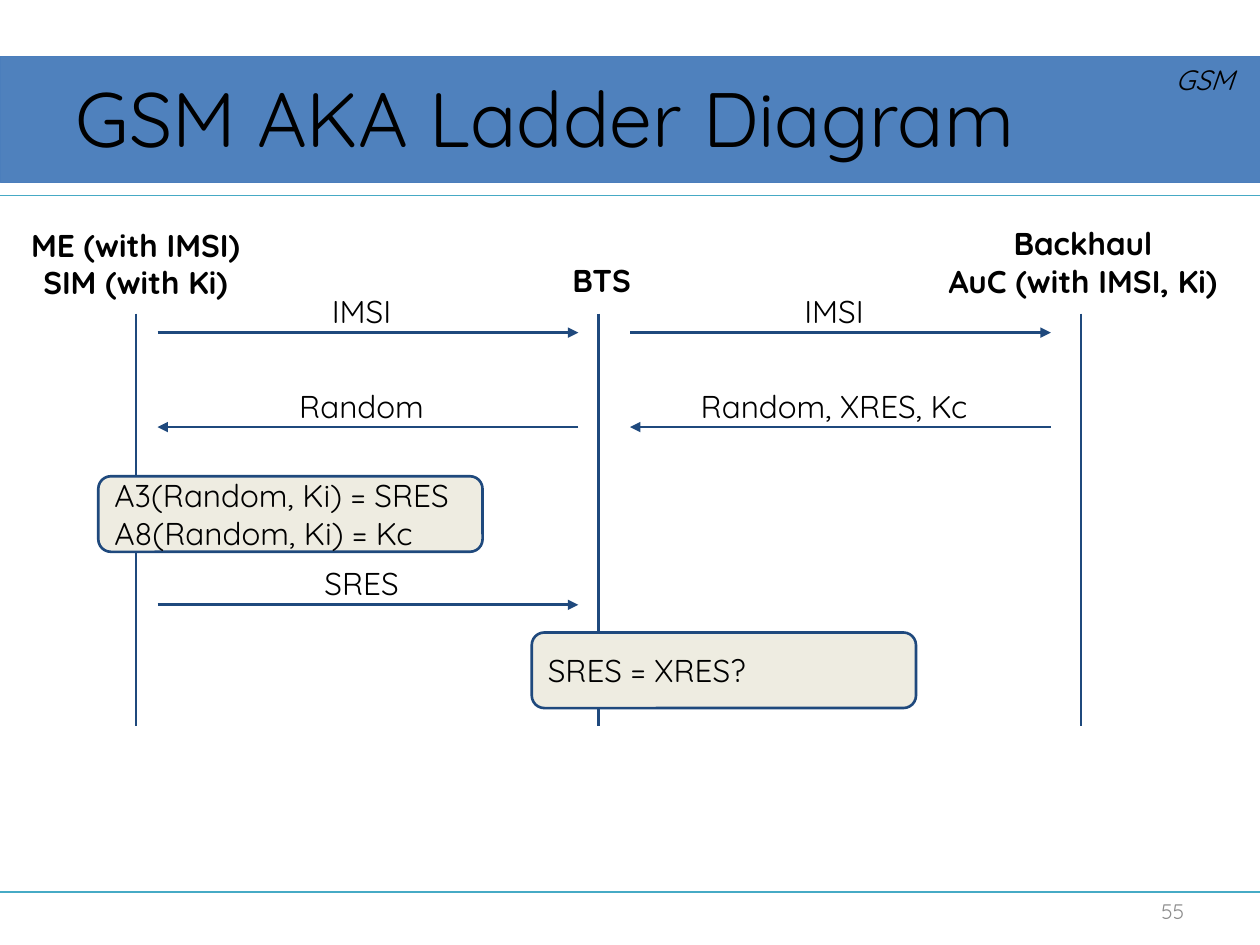
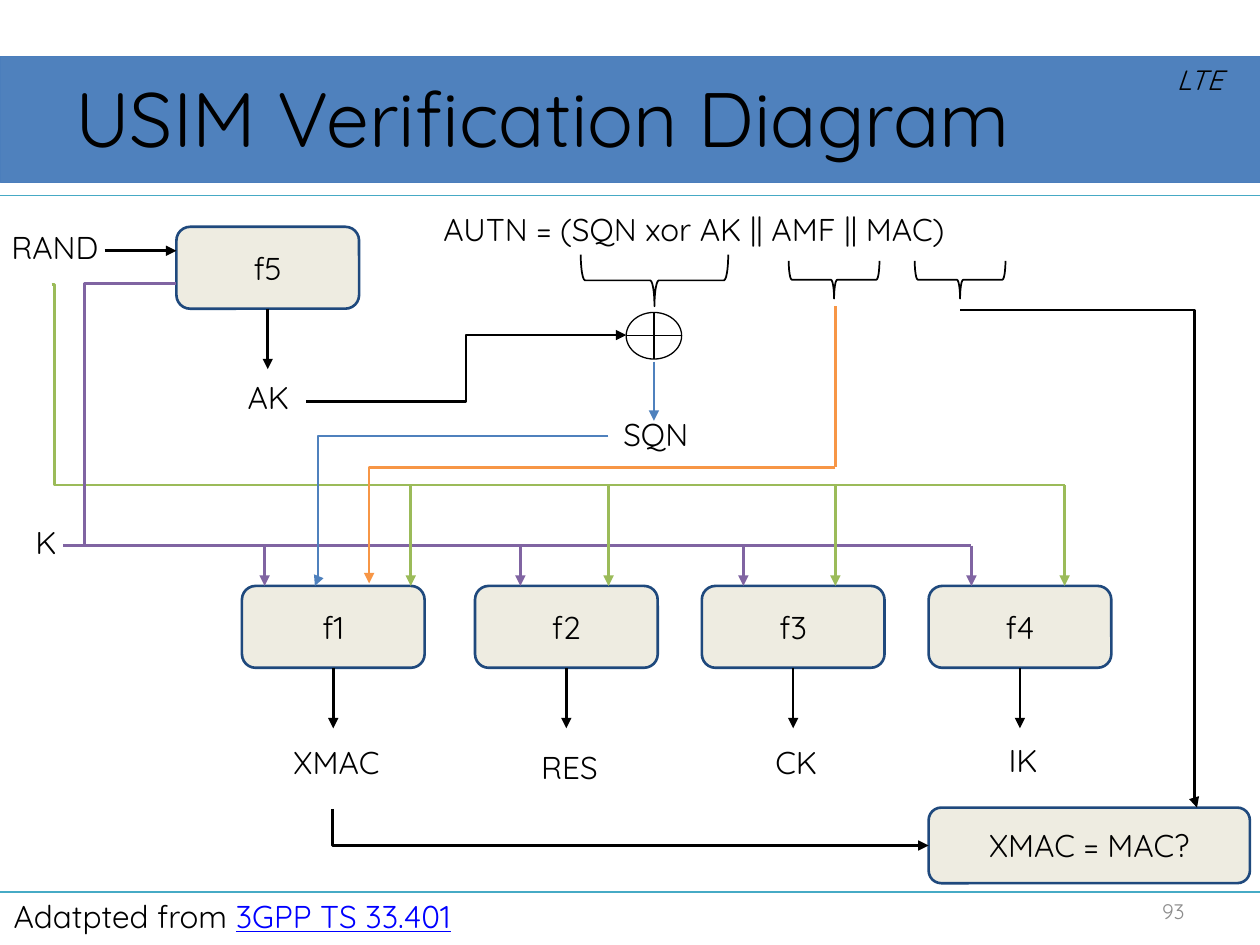
from lxml import etree
from pptx import Presentation
from pptx.dml.color import RGBColor
from pptx.enum import shapes, text
from pptx.oxml import ns
from pptx.util import Inches, Pt

BLACK = RGBColor(0x00, 0x00, 0x00)
GRAY = RGBColor(0x8C, 0x8C, 0x8C)
NAVY = RGBColor(0x1F, 0x49, 0x7D)
BLUE = RGBColor(0x4F, 0x81, 0xBD)
BAND_EDGE = RGBColor(0x4B, 0x7E, 0xBC)
TEAL = RGBColor(0x46, 0xAA, 0xC5)
CREAM = RGBColor(0xEE, 0xEC, 0xE1)
GREEN = RGBColor(0x9B, 0xBB, 0x59)
PURPLE = RGBColor(0x80, 0x64, 0xA2)
ORANGE = RGBColor(0xF7, 0x96, 0x46)
LINK = RGBColor(0x00, 0x00, 0xFF)

FONT = "Quicksand"
SHAPE = shapes.MSO_SHAPE
LEFT, CENTER, RIGHT = text.PP_ALIGN.LEFT, text.PP_ALIGN.CENTER, text.PP_ALIGN.RIGHT
TOP, MIDDLE = text.MSO_ANCHOR.TOP, text.MSO_ANCHOR.MIDDLE

LIFELINES = [1.08, 4.75, 8.58]
LIFELINE_TOP, LIFELINE_BOTTOM = 2.49, 5.76
PARTIES = [
    (["ME (with IMSI)", "SIM (with Ki)"], (-0.08, 1.69, 2.31, 0.83)),
    (["BTS"], (3.81, 1.97, 1.93, 0.4)),
    (["Backhaul", "AuC (with IMSI, Ki)"], (7.37, 1.68, 2.45, 0.93)),
]
ME_TO_BTS, BTS_TO_AUC = (1.25, 4.59), (5, 8.34)
MESSAGES = [
    ("IMSI", ME_TO_BTS, 2.64),
    ("IMSI", BTS_TO_AUC, 2.64),
    ("Random, XRES, Kc", BTS_TO_AUC[::-1], 3.39),
    ("Random", ME_TO_BTS[::-1], 3.39),
    ("SRES", ME_TO_BTS, 4.8),
]
COMPUTATIONS = [
    (["A3(Random, Ki) = SRES", "A8(Random, Ki) = Kc"], (0.78, 3.78)),
    (["SRES = XRES?"], (4.22, 5.02)),
]

FUNCTION_SIZE = (1.45, 0.65)
FUNCTION_TOP = 4.65
FUNCTIONS = [
    ("f1", 1.92, "XMAC", 5.8),
    ("f2", 3.77, "RES", 5.84),
    ("f3", 5.57, "CK", 5.8),
    ("f4", 7.37, "IK", 5.78),
]
INPUTS = [
    ("SQN", (4.24, 3.19)),
    ("K", (-0.6, 4.05)),
    ("RAND", (-0.53, 1.71)),
]
RAND_BUS, RAND_DROPS = 3.85, [3.26, 4.83, 6.63, 8.45]
K_BUS, K_DROPS = 4.33, [2.1, 4.13, 5.9, 7.71]
STRAIGHTS = [
    ((8.45, RAND_BUS), (2.52, RAND_BUS), GREEN, False),
    ((7.71, K_BUS), (0.5, K_BUS), PURPLE, False),
    ((0.83, 1.99), (1.4, 1.99), BLACK, True),
    ((5.19, 2.87), (5.19, 3.34), BLUE, True),
    ((6.63, 2.43), (6.63, 3.71), ORANGE, False),
    ((2.93, 4.01), (2.93, 4.63), ORANGE, True),
]
ELBOWS = [
    ((0.41, 2.26), (2.52, RAND_BUS), GREEN, False, 0.01),
    ((1.4, 2.25), (0.67, K_BUS), PURPLE, False, 1),
    ((4.83, 3.46), (2.5, 4.65), BLUE, True, 0.99),
    ((6.63, 3.71), (2.93, 4.01), ORANGE, False, 1),
    ((2.43, 3.19), (4.97, 2.66), BLACK, True, 0.5),
    ((7.62, 2.46), (9.5, 6.41), BLACK, True, 0.99),
    ((2.64, 6.42), (7.37, 6.71), BLACK, True, 0),
]
BRACES = [(4.99, 1.64, 0.41, 1.17), (6.47, 1.86, 0.3, 0.72), (7.47, 1.86, 0.3, 0.72)]


def inches(values):
    return [Inches(value) for value in values]


def apply(target, settings):
    for name, value in settings.items():
        setattr(target, name, value)


def format_font(span, size=18, color=BLACK, **settings):
    apply(span.font, {"name": FONT, "size": Pt(size), **settings})
    span.font.color.rgb = color


def write(frame, lines, align=CENTER, anchor=TOP, inset=0.1, wrap=True, **font):
    apply(frame, {
        "word_wrap": wrap, "vertical_anchor": anchor, "auto_size": text.MSO_AUTO_SIZE.NONE,
        "margin_top": Inches(inset), "margin_bottom": Inches(inset),
        "margin_left": Inches(0.1), "margin_right": Inches(0.1),
    })
    for index, line in enumerate(lines):
        para = frame.paragraphs[0] if index == 0 else frame.add_paragraph()
        para.alignment = align
        span = para.add_run()
        span.text = line
        format_font(span, **font)


def add_label(page, lines, place, **settings):
    box = page.shapes.add_textbox(*inches(place))
    write(box.text_frame, lines, **settings)
    return box


def add_figure(page, kind, place, line, width, fill=None):
    figure = page.shapes.add_shape(kind, *inches(place))
    figure.shadow.inherit = False
    if fill is None:
        figure.fill.background()
    else:
        figure.fill.solid()
        figure.fill.fore_color.rgb = fill
    figure.line.color.rgb = line
    figure.line.width = Pt(width)
    return figure


def add_block(page, lines, place, align=CENTER):
    block = add_figure(page, SHAPE.ROUNDED_RECTANGLE, place, NAVY, 1.5, CREAM)
    write(block.text_frame, lines, align, MIDDLE)
    return block


def add_line(page, start, end, color, arrow=False, width=1.5, bend=None):
    kind = shapes.MSO_CONNECTOR.STRAIGHT if bend is None else shapes.MSO_CONNECTOR.ELBOW
    line = page.shapes.add_connector(kind, *inches(start + end))
    line.line.color.rgb = color
    line.line.width = Pt(width)
    properties = line.element.spPr
    if arrow:
        etree.SubElement(properties.find(ns.qn("a:ln")), ns.qn("a:tailEnd"), type="triangle")
    if bend is not None:
        guides = properties.find(ns.qn("a:prstGeom")).find(ns.qn("a:avLst"))
        etree.SubElement(guides, ns.qn("a:gd"), name="adj1", fmla=f"val {round(bend * 100000)}")
    etree.SubElement(properties, ns.qn("a:effectLst"))
    return line


def add_page(deck, heading, topic, topic_place, number):
    page = deck.slides.add_slide(deck.slide_layouts[5])
    add_figure(page, SHAPE.RECTANGLE, (0, 0.45, 10, 1), BAND_EDGE, 0.25, BLUE)
    for y in (1.55, 7.08):
        add_line(page, (0, y), (10, y), TEAL, width=0.75)
    title = page.shapes.title
    apply(title, dict(zip(("left", "top", "width", "height"), inches((0.5, 0.3, 9, 1.25)))))
    write(title.text_frame, [heading], LEFT, MIDDLE, 0.05, size=44)
    title.element.getparent().append(title.element)
    add_label(page, [number], (7.17, 7.03, 2.33, 0.4), align=RIGHT, anchor=MIDDLE,
              inset=0.05, size=12, color=GRAY)
    add_label(page, [topic], topic_place, inset=0.05, size=16, italic=True)
    return page


def build_ladder(deck):
    page = add_page(deck, "GSM AKA Ladder Diagram", "GSM", (8.88, 0.45, 1.36, 0.37), "55")
    for x in LIFELINES:
        add_line(page, (x, LIFELINE_TOP), (x, LIFELINE_BOTTOM), NAVY)
    for lines, place in PARTIES:
        add_label(page, lines, place, bold=True)
    label_width = 2.46
    for message, (start, end), y in MESSAGES:
        add_line(page, (start, y), (end, y), NAVY, arrow=True)
        left = (start + end - label_width) / 2 - 0.05
        add_label(page, [message], (left, y - 0.42, label_width, 0.4))
    for lines, corner in COMPUTATIONS:
        add_block(page, lines, corner + (3.05, 0.6), LEFT)


def add_output(page, block, length=0.48):
    center = (block.left + block.width / 2) / Inches(1)
    bottom = (block.top + block.height) / Inches(1)
    arrow = add_line(page, (center, bottom), (center, bottom + length), BLACK, arrow=True)
    arrow.begin_connect(block, 2)


def build_verification(deck):
    page = add_page(deck, "USIM Verification Diagram", "LTE", (9.08, 0.45, 0.88, 0.37), "93")
    add_block(page, ["XMAC = MAC?"], (7.37, 6.41, 2.55, 0.6))
    for name, left, result, result_top in FUNCTIONS:
        block = add_block(page, [name], (left, FUNCTION_TOP) + FUNCTION_SIZE)
        add_output(page, block)
        add_label(page, [result], (left + 0.14, result_top, 1.22, 0.4))
    add_output(page, add_block(page, ["f5"], (1.4, 1.8) + FUNCTION_SIZE))
    add_label(page, ["AK"], (1.52, 2.9, 1.22, 0.4))
    for name, corner in INPUTS:
        add_label(page, [name], corner + (1.93, 0.4))

    for start, end, color, arrow in STRAIGHTS:
        add_line(page, start, end, color, arrow)
    for bus, drops, color in ((RAND_BUS, RAND_DROPS, GREEN), (K_BUS, K_DROPS, PURPLE)):
        for x in drops:
            add_line(page, (x, bus), (x, FUNCTION_TOP), color, arrow=True)
    for start, end, color, arrow, bend in ELBOWS:
        add_line(page, start, end, color, arrow, bend=bend)

    add_label(page, ["AUTN = (SQN xor AK || AMF || MAC)"], (3.42, 1.62, 4.82, 0.4),
              align=LEFT, inset=0.05, wrap=False)
    for place in BRACES:
        add_figure(page, SHAPE.LEFT_BRACE, place, BLACK, 1).rotation = 270
    add_figure(page, SHAPE.FLOWCHART_OR, (4.97, 2.48, 0.44, 0.37), BLACK, 0.75)

    credit = add_label(page, ["Adatpted from "], (0.01, 7.07, 3.91, 0.4),
                       align=LEFT, inset=0.05, wrap=False)
    standard = credit.text_frame.paragraphs[0].add_run()
    standard.text = "3GPP TS 33.401"
    format_font(standard, color=LINK, underline=True)


def main():
    deck = Presentation()
    deck.slide_width, deck.slide_height = inches((10, 7.5))
    build_ladder(deck)
    build_verification(deck)
    deck.save("out.pptx")


if __name__ == "__main__":
    main()
